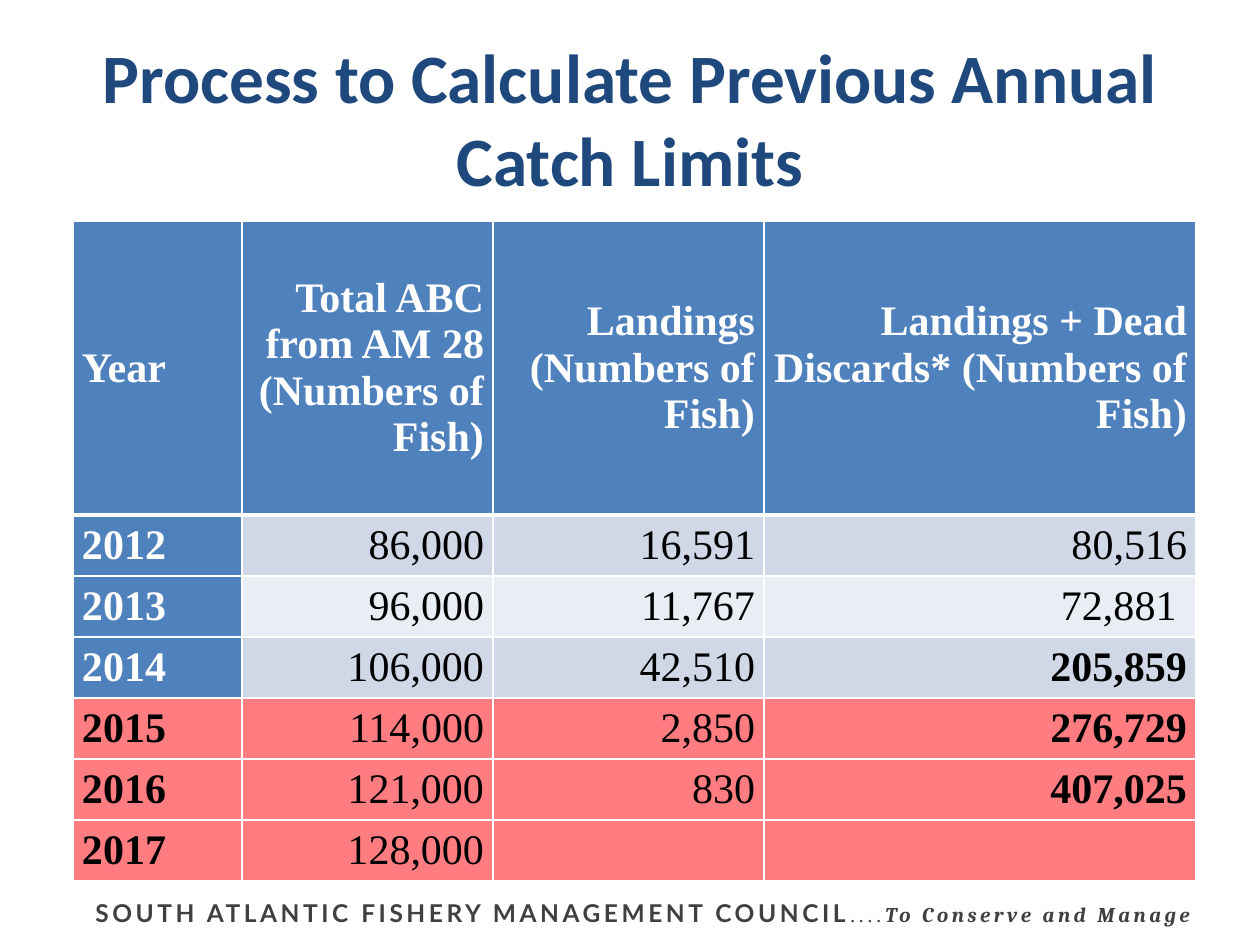
import dataclasses

import pptx
import pptx.dml.color
import pptx.enum.text
import pptx.oxml
import pptx.oxml.ns
import pptx.util

ALIGN = pptx.enum.text.PP_ALIGN
MIDDLE = pptx.enum.text.MSO_ANCHOR.MIDDLE
EMU_PER_PX = 914400 / 126


@dataclasses.dataclass(frozen=True)
class Theme:
    """Colours, fonts and type sizes of the slide."""
    navy: str = "1F497D"
    blue: str = "4F81BD"
    band_dark: str = "D0D8E8"
    band_light: str = "E9EDF4"
    closed: str = "FF7C80"
    white: str = "FFFFFF"
    black: str = "000000"
    gray: str = "404040"
    title_font: str = "Calibri"
    table_font: str = "Times New Roman"
    council_font: str = "Lato"
    motto_font: str = "Cambria"
    title_size: float = 39.6
    table_size: int = 24
    council_size: int = 14
    motto_size: int = 12


THEME = Theme()
HEADERS = ["Year", "Total ABC from AM 28 (Numbers of Fish)",
           "Landings (Numbers of Fish)",
           "Landings + Dead Discards* (Numbers of Fish)"]
CATCHES = [
    ["2012", "86,000", "16,591", "80,516"],
    ["2013", "96,000", "11,767", "72,881 "],
    ["2014", "106,000", "42,510", "205,859"],
    ["2015", "114,000", "2,850", "276,729"],
    ["2016", "121,000", "830", "407,025"],
    ["2017", "128,000", "", ""],
]
FIRST_CLOSED_YEAR = 2015
COLUMN_WIDTHS = [169, 251, 271, 432]
HEADER_HEIGHT = 294
CELL_MARGIN = 9


def px(length):
    """Turn px into EMU."""
    return pptx.util.Emu(round(length * EMU_PER_PX))


def format_font(font, name, size, color, bold=False, italic=False):
    """Set the look of a font."""
    font.name = name
    font.size = pptx.util.Pt(size)
    font.bold = bold
    font.italic = italic
    font.color.rgb = pptx.dml.color.RGBColor.from_string(color)


def add_title(slide, box):
    """Fill the title placeholder and place it in the box."""
    title = slide.shapes.title
    title.left, title.top, title.width, title.height = map(px, box)
    frame = title.text_frame
    frame.text = "Process to Calculate Previous Annual Catch Limits"
    frame.vertical_anchor = MIDDLE
    frame.word_wrap = True
    paragraph = frame.paragraphs[0]
    paragraph.alignment = ALIGN.CENTER
    format_font(paragraph.runs[0].font, THEME.title_font, THEME.title_size,
                THEME.navy, bold=True)


def add_borders(cell, bottom_width):
    """Draw white lines around a cell."""
    properties = cell._tc.get_or_add_tcPr()
    for side, width in (("L", 1), ("R", 1), ("T", 1), ("B", bottom_width)):
        properties.append(pptx.oxml.parse_xml(
            f'<a:ln{side} {pptx.oxml.ns.nsdecls("a")} w="{pptx.util.Pt(width)}">'
            f'<a:solidFill><a:srgbClr val="{THEME.white}"/></a:solidFill></a:ln{side}>'))


def fill_cell(cell, text, fill, color, bold, alignment, bottom_width):
    """Write and format one table cell."""
    add_borders(cell, bottom_width)
    cell.fill.solid()
    cell.fill.fore_color.rgb = pptx.dml.color.RGBColor.from_string(fill)
    cell.margin_left = cell.margin_right = px(CELL_MARGIN)
    cell.margin_top = cell.margin_bottom = 0
    cell.vertical_anchor = MIDDLE
    cell.text_frame.text = text
    paragraph = cell.text_frame.paragraphs[0]
    paragraph.alignment = alignment
    format_font(paragraph.font, THEME.table_font, THEME.table_size, color, bold)
    for run in paragraph.runs:
        format_font(run.font, THEME.table_font, THEME.table_size, color, bold)


def count_fish(text):
    """Read a number of fish, with an empty entry as zero."""
    return int(text.replace(",", "") or 0)


def choose_style(row, column):
    """Return fill, text colour and weight for a table position."""
    if row == 0:
        return THEME.blue, THEME.white, True
    year, limit, _, removals = CATCHES[row - 1]
    over_limit = column == 3 and count_fish(removals) > count_fish(limit)
    bold = column == 0 or over_limit
    if int(year) >= FIRST_CLOSED_YEAR:
        return THEME.closed, THEME.black, bold
    if column == 0:
        return THEME.blue, THEME.white, bold
    return THEME.band_dark if row % 2 else THEME.band_light, THEME.black, bold


def add_catch_table(slide, box):
    """Add the table of limits and landings in the box."""
    rows = [HEADERS] + CATCHES
    table = slide.shapes.add_table(len(rows), len(HEADERS), *map(px, box)).table
    for column, width in zip(table.columns, COLUMN_WIDTHS):
        column.width = px(width)
    body_height = (box[3] - HEADER_HEIGHT) / len(CATCHES)
    for row_index, texts in enumerate(rows):
        table.rows[row_index].height = px(body_height if row_index else HEADER_HEIGHT)
        for column_index, text in enumerate(texts):
            fill, color, bold = choose_style(row_index, column_index)
            fill_cell(table.cell(row_index, column_index), text, fill, color, bold,
                      ALIGN.RIGHT if column_index else ALIGN.LEFT,
                      1 if row_index else 3)


def add_footer(slide, box):
    """Add the council name and motto in the box."""
    frame = slide.shapes.add_textbox(*map(px, box)).text_frame
    frame.word_wrap = True
    parts = [
        ("SOUTH ATLANTIC FISHERY MANAGEMENT COUNCIL", THEME.council_font,
         THEME.council_size, True, False),
        ("....", THEME.table_font, THEME.motto_size, False, False),
        ("To Conserve and Manage", THEME.motto_font, THEME.motto_size, True, True),
    ]
    for text, name, size, bold, italic in parts:
        run = frame.paragraphs[0].add_run()
        run.text = text
        format_font(run.font, name, size, THEME.gray, bold, italic)
        run._r.get_or_add_rPr().set("spc", "200")


def main():
    """Build and save the presentation."""
    presentation = pptx.Presentation()
    presentation.slide_width, presentation.slide_height = px(1260), px(945)
    slide = presentation.slides.add_slide(presentation.slide_layouts[5])
    add_footer(slide, (83, 892, 1177, 43))
    add_title(slide, (63, 38, 1134, 158))
    add_catch_table(slide, (73, 221, sum(COLUMN_WIDTHS), 660))
    presentation.save("out.pptx")


if __name__ == "__main__":
    main()
